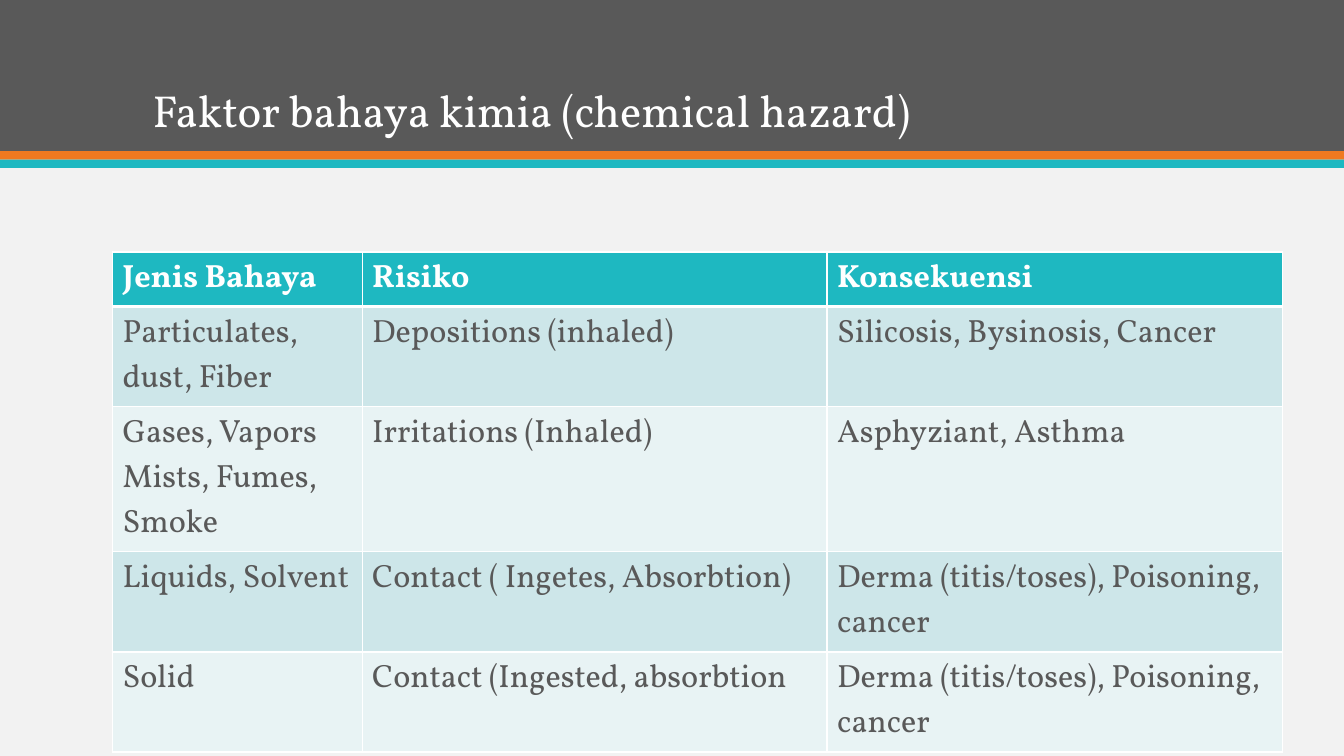
"""Builds the chemical hazard slide on a grid of 160 columns by 90 rows."""
from dataclasses import dataclass

from lxml import etree
from pptx import Presentation
from pptx import util as u
from pptx.dml.color import RGBColor
from pptx.enum import shapes, text
from pptx.oxml.ns import qn

GRID_COLUMNS, GRID_ROWS = 160, 90
UNIT = u.Inches(7.5) / GRID_ROWS
FONT = "Vollkorn"
WHITE, GREY, TEAL, ORANGE = "FFFFFF", "595959", "1EB8C1", "EF7920"
PAGE, DARK_STRIPE, LIGHT_STRIPE = "F2F2F2", "CDE6E9", "E8F3F4"


@dataclass(frozen=True)
class Band:
    """A full-width stripe, placed in grid rows."""
    top: float
    height: float
    fill: str


@dataclass(frozen=True)
class HazardRow:
    """A table row with its height in grid rows."""
    height: float
    cells: tuple[str, str, str]


BANDS = (Band(0, 18, GREY), Band(18, 1, ORANGE), Band(19, 1, TEAL))
TITLE = "Faktor bahaya kimia (chemical hazard)"
COLUMN_WIDTHS = (29.72, 55.35, 54.25)
ONE_LINE, TWO_LINES, THREE_LINES = 6.5, 11.92, 17.28
HAZARDS = (
    HazardRow(ONE_LINE, ("Jenis Bahaya", "Risiko", "Konsekuensi")),
    HazardRow(TWO_LINES, ("Particulates, dust, Fiber", "Depositions (inhaled)",
                          "Silicosis, Bysinosis, Cancer")),
    HazardRow(THREE_LINES, ("Gases, Vapors Mists, Fumes, Smoke", "Irritations (Inhaled)",
                            "Asphyziant, Asthma")),
    HazardRow(TWO_LINES, ("Liquids, Solvent", "Contact ( Ingetes, Absorbtion)",
                          "Derma (titis/toses), Poisoning, cancer")),
    HazardRow(TWO_LINES, ("Solid", "Contact (Ingested, absorbtion",
                          "Derma (titis/toses), Poisoning, cancer")),
)


def grid(count: float) -> u.Emu:
    """Turn grid units into a length."""
    return u.Emu(round(count * UNIT))


def paint(fill, colour: str) -> None:
    """Give a fill one solid colour."""
    fill.solid()
    fill.fore_color.rgb = RGBColor.from_string(colour)


def style_text(paragraph, size: float, colour: str, bold: bool = False) -> None:
    """Format every run of a paragraph."""
    for run in paragraph.runs:
        run.font.name = FONT
        run.font.size = u.Pt(size)
        run.font.bold = bold
        paint(run.font.fill, colour)


def draw_band(slide, band: Band) -> None:
    """Draw one stripe across the slide."""
    shape = slide.shapes.add_shape(
        shapes.MSO_SHAPE.RECTANGLE, 0, grid(band.top), grid(GRID_COLUMNS), grid(band.height))
    shape.shadow.inherit = False
    paint(shape.fill, band.fill)
    shape.line.fill.background()


def draw_title(slide) -> None:
    """Write the title at the foot of the grey band."""
    shape = slide.shapes.add_textbox(grid(17), grid(3.4), grid(126), grid(13.5))
    frame = shape.text_frame
    frame.word_wrap = True
    frame.vertical_anchor = text.MSO_ANCHOR.BOTTOM
    frame.text = TITLE
    frame.paragraphs[0].line_spacing = 0.9
    style_text(frame.paragraphs[0], 32, WHITE)


def add_borders(cell, top: float, bottom: float) -> None:
    """Put white lines round a cell, with widths in points."""
    properties = cell._tc.get_or_add_tcPr()
    widths = {"a:lnL": 1, "a:lnR": 1, "a:lnT": top, "a:lnB": bottom}
    for index, (side, width) in enumerate(widths.items()):
        line = etree.Element(qn(side), w=str(u.Pt(width)))
        solid = etree.SubElement(line, qn("a:solidFill"))
        etree.SubElement(solid, qn("a:srgbClr"), val=WHITE)
        properties.insert(index, line)


def draw_table(slide) -> None:
    """Draw the table of hazards, risks and consequences."""
    table = slide.shapes.add_table(
        len(HAZARDS), len(COLUMN_WIDTHS), grid(13.4), grid(30),
        grid(sum(COLUMN_WIDTHS)), grid(sum(hazard.height for hazard in HAZARDS))).table
    for column, width in zip(table.columns, COLUMN_WIDTHS):
        column.width = grid(width)
    for row_index, hazard in enumerate(HAZARDS):
        table.rows[row_index].height = grid(hazard.height)
        header = row_index == 0
        stripe = DARK_STRIPE if row_index % 2 else LIGHT_STRIPE
        for column_index, words in enumerate(hazard.cells):
            cell = table.cell(row_index, column_index)
            cell.text_frame.text = words
            style_text(cell.text_frame.paragraphs[0], 23, WHITE if header else GREY, header)
            paint(cell.fill, TEAL if header else stripe)
            add_borders(cell, 3 if row_index == 1 else 1, 3 if header else 1)


def main() -> None:
    """Build and save the presentation."""
    presentation = Presentation()
    presentation.slide_width = grid(GRID_COLUMNS)
    presentation.slide_height = grid(GRID_ROWS)
    slide = presentation.slides.add_slide(presentation.slide_layouts[6])
    paint(slide.background.fill, PAGE)
    for band in BANDS:
        draw_band(slide, band)
    draw_title(slide)
    draw_table(slide)
    presentation.save("out.pptx")


if __name__ == "__main__":
    main()
